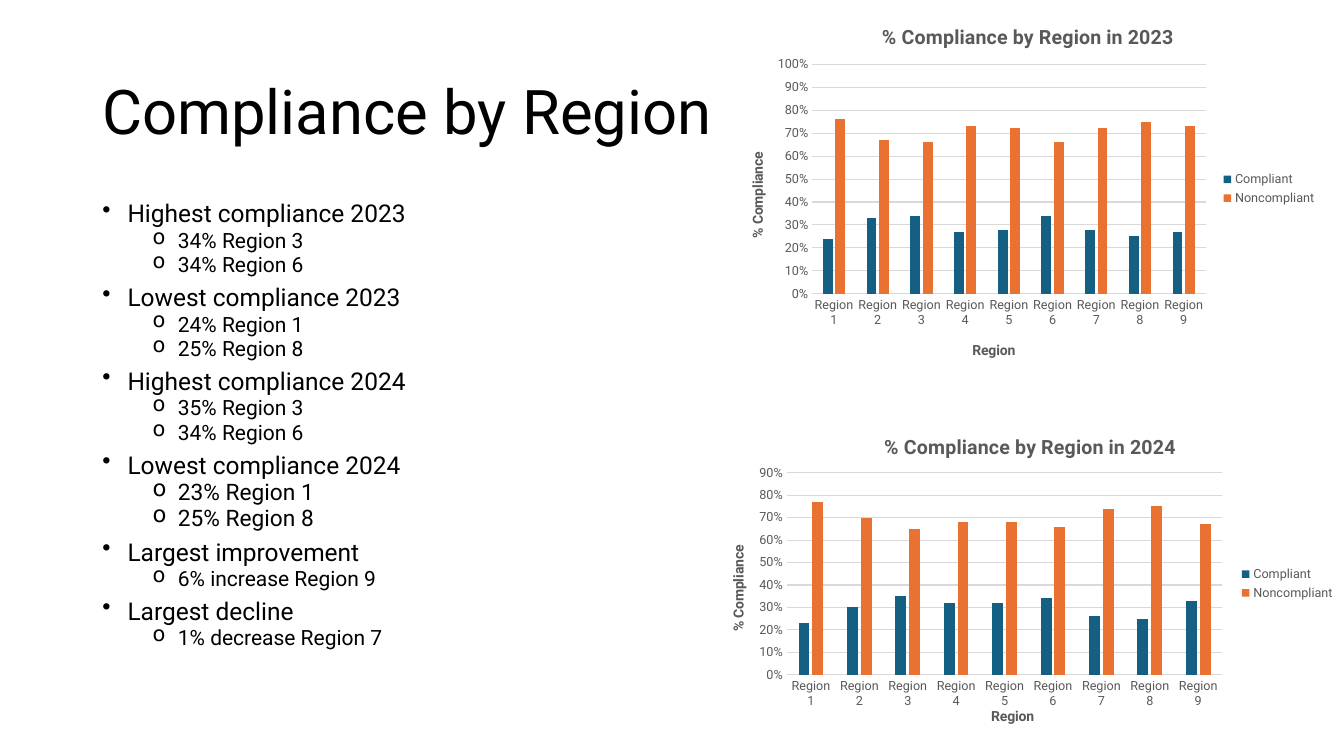
"""Build the slide on compliance by region in 2023 and 2024."""
import lxml.etree
import pptx
import pptx.chart.data
import pptx.dml.color
import pptx.enum.chart
import pptx.enum.text
import pptx.oxml.ns
import pptx.util

Cm, Pt, qn = pptx.util.Cm, pptx.util.Pt, pptx.oxml.ns.qn
COLORS = {"text": "000000", "muted": "595959", "grid": "D9D9D9",
          "Compliant": "156082", "Noncompliant": "E97132"}
FINDINGS = [
    ("Highest compliance 2023", ["34% Region 3", "34% Region 6"], 15),
    ("Lowest compliance 2023", ["24% Region 1", "25% Region 8"], 15),
    ("Highest compliance 2024", ["35% Region 3", "34% Region 6"], 15),
    ("Lowest compliance 2024", ["23% Region 1", "25% Region 8"], 16.2),
    ("Largest improvement", ["6% increase Region 9"], 15),
    ("Largest decline", ["1% decrease Region 7"], 15),
]
CHARTS = [
    {"year": 2023, "box": (18.24, 0.03, 15.16, 9.45), "top": 1,
     "Compliant": [0.24, 0.33, 0.34, 0.27, 0.28, 0.34, 0.28, 0.25, 0.27],
     "Noncompliant": [0.76, 0.67, 0.66, 0.73, 0.72, 0.66, 0.72, 0.75, 0.73],
     "plot": (14.7, 16.8, 65.4, 61.3), "title": (25.7, 4.9),
     "value": (3.7, 39.5), "category": (40.9, 89.9), "legend": (82.4, 44.5)},
    {"year": 2024, "box": (17.75, 10.36, 16.1, 8.69), "top": 0.9,
     "Compliant": [0.23, 0.3, 0.35, 0.32, 0.32, 0.34, 0.26, 0.25, 0.33],
     "Noncompliant": [0.77, 0.7, 0.65, 0.68, 0.68, 0.66, 0.74, 0.75, 0.67],
     "plot": (12.9, 17.9, 68.2, 58.6), "title": (27.6, 5.3),
     "value": (3.5, 38.2), "category": (44.5, 85.2), "legend": (83.5, 44)},
]


def rgb(name):
    return pptx.dml.color.RGBColor.from_string(COLORS[name])


def set_font(font, size, color="text", bold=False):
    font.name, font.size, font.bold = "Roboto", Pt(size), bold
    font.color.rgb = rgb(color)


def write(p, text, size, color="text", bold=False, spacing=None, before=0):
    r = p.add_run()
    r.text = text
    set_font(r.font, size, color, bold)
    if spacing:
        p.line_spacing, p.space_before = spacing, Pt(before)


def add_bullet(p, char, indent):
    pPr = p._p.get_or_add_pPr()
    pPr.set("marL", str(Cm(indent)))
    pPr.set("indent", str(-Cm(0.635)))
    lxml.etree.SubElement(pPr, qn("a:buChar")).set("char", char)


def place(el, index, box):
    for old in el.findall(qn("c:layout")):
        el.remove(old)
    layout = lxml.etree.Element(qn("c:layout"))
    el.insert(index, layout)
    manual = lxml.etree.SubElement(layout, qn("c:manualLayout"))
    settings = [("xMode", "edge"), ("yMode", "edge")]
    if len(box) == 4:
        settings.insert(0, ("layoutTarget", "inner"))
    settings += [(k, str(round(v / 100, 4))) for k, v in zip("xywh", box)]
    for tag, val in settings:
        lxml.etree.SubElement(manual, qn("c:" + tag)).set("val", val)


class Deck:
    def __init__(self):
        self.prs = pptx.Presentation()
        self.prs.slide_width, self.prs.slide_height = Cm(33.87), Cm(19.05)
        self.s = self.prs.slides.add_slide(self.prs.slide_layouts[6])

    def text_box(self, box, anchor):
        tf = self.s.shapes.add_textbox(*map(Cm, box)).text_frame
        tf.word_wrap, tf.vertical_anchor = True, anchor
        return tf

    def heading(self, text, box):
        tf = self.text_box(box, pptx.enum.text.MSO_ANCHOR.MIDDLE)
        write(tf.paragraphs[0], text, 44, spacing=0.9)

    def findings(self, groups, box):
        tf = self.text_box(box, pptx.enum.text.MSO_ANCHOR.TOP)
        p = tf.paragraphs[0]
        for i, (head, details, size) in enumerate(groups):
            if i:
                p = tf.add_paragraph()
            write(p, head, 17.5, spacing=0.7, before=10)
            add_bullet(p, "•", 0.635)
            for detail in details:
                p = tf.add_paragraph()
                p.level = 1
                write(p, detail, size, spacing=0.7, before=5)
                add_bullet(p, "o", 1.905)

    def axis(self, axis, title, box):
        set_font(axis.tick_labels.font, 9, "muted")
        axis.major_tick_mark = pptx.enum.chart.XL_TICK_MARK.NONE
        axis.minor_tick_mark = pptx.enum.chart.XL_TICK_MARK.NONE
        self.chart_title(axis.axis_title, title, 10, box)

    def chart_title(self, title, text, size, box):
        write(title.text_frame.paragraphs[0], text, size, "muted", bold=True)
        place(title._element, 1, box)

    def chart(self, spec_):
        data = pptx.chart.data.CategoryChartData(number_format="0%")
        data.categories = [f"Region {n}" for n in range(1, 10)]
        for name in ("Compliant", "Noncompliant"):
            data.add_series(name, spec_[name])
        kind = pptx.enum.chart.XL_CHART_TYPE.COLUMN_CLUSTERED
        chart = self.s.shapes.add_chart(kind, *map(Cm, spec_["box"]), data).chart
        set_font(chart.font, 10)
        chart.has_title = True
        self.chart_title(chart.chart_title,
                         f"% Compliance by Region in {spec_['year']}", 14, spec_["title"])

        plot = chart.plots[0]
        plot.gap_width, plot.overlap, plot.vary_by_categories = 219, -27, False
        for series in plot.series:
            series.format.fill.solid()
            series.format.fill.fore_color.rgb = rgb(series.name)
        place(chart._chartSpace.find(".//" + qn("c:plotArea")), 0, spec_["plot"])

        cat, val = chart.category_axis, chart.value_axis
        self.axis(cat, "Region", spec_["category"])
        self.axis(val, "% Compliance", spec_["value"])
        val.axis_title.text_frame._txBody.bodyPr.set("rot", "-5400000")
        val.minimum_scale, val.maximum_scale, val.major_unit = 0, spec_["top"], 0.1
        val.tick_labels.number_format = "0%"
        val.tick_labels.number_format_is_linked = False
        val.format.line.fill.background()
        for line in (cat.format.line, val.major_gridlines.format.line):
            line.color.rgb, line.width = rgb("grid"), Pt(0.75)

        chart.has_legend = True
        chart.legend.position = pptx.enum.chart.XL_LEGEND_POSITION.RIGHT
        chart.legend.include_in_layout = False
        set_font(chart.legend.font, 9, "muted")
        place(chart.legend._element, 1, spec_["legend"])


def main():
    deck = Deck()
    deck.heading("Compliance by Region", (2.33, 1.02, 15.88, 3.73))
    deck.findings(FINDINGS, (2.33, 5.08, 15.88, 12.09))
    for chart in CHARTS:
        deck.chart(chart)
    deck.prs.save("out.pptx")


if __name__ == "__main__":
    main()
